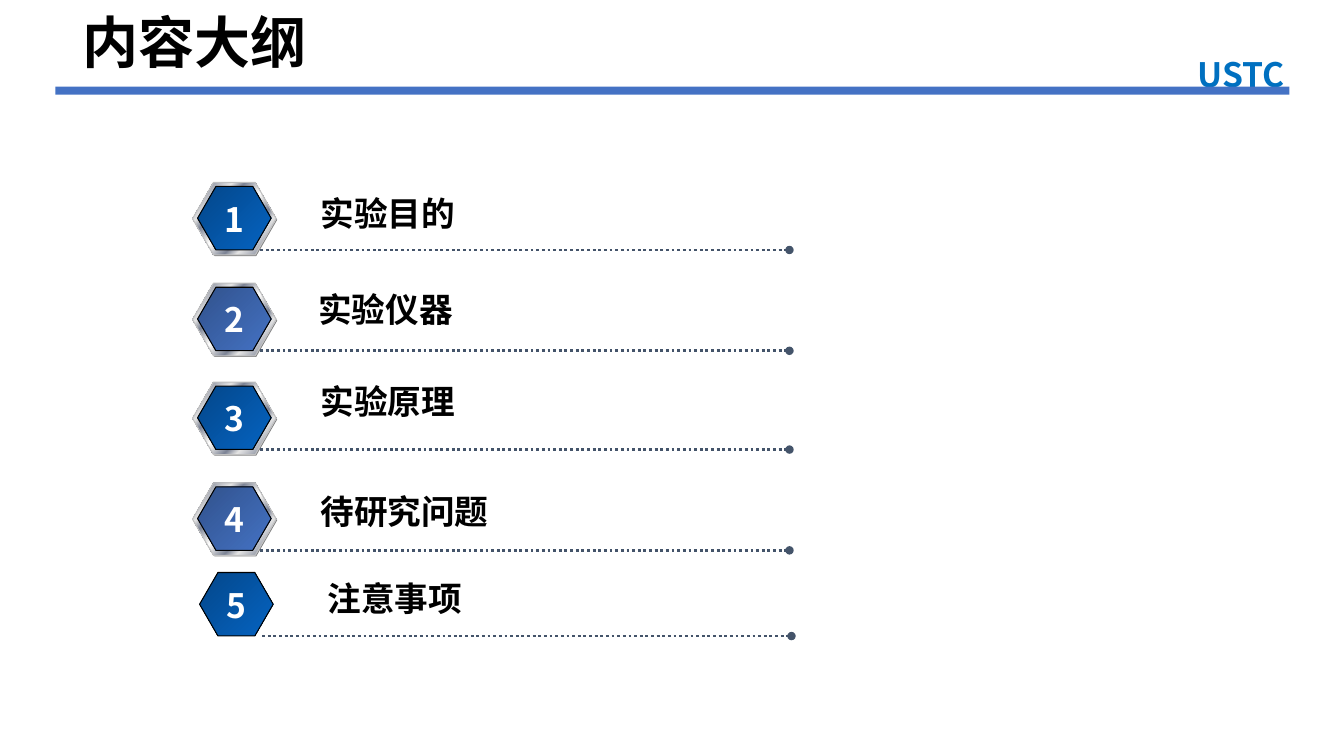
from lxml.etree import SubElement
from pptx import Presentation
from pptx.dml.color import RGBColor
from pptx.enum.dml import MSO_LINE
from pptx.enum.shapes import MSO_CONNECTOR, MSO_SHAPE
from pptx.enum.text import MSO_AUTO_SIZE, PP_ALIGN
from pptx.oxml.ns import qn
from pptx.util import Inches, Pt

FONT = "Noto Sans CJK SC"
TITLE, SCHOOL = "内容大纲", "USTC"
BLUE = [(0, "04478A"), (100, "0563C1")]
NAVY = [(0, "31528C"), (100, "4472C4")]
STEEL = [(0, "E6E6E6"), (8, "7D8496"), (26, "E6E6E6"), (34, "7D8496"),
         (46, "E6E6E6"), (50, "FFFFFF"), (54, "E6E6E6"), (66, "7D8496"),
         (74, "E6E6E6"), (92, "7D8496"), (100, "E6E6E6")]
# label, hexagon left and top, label left, top and width, framed
ROWS = [
    ("实验目的", 1.96, 1.85, 3.08, 1.86, 1.73, True),
    ("实验仪器", 1.96, 2.85, 3.06, 2.82, 1.56, True),
    ("实验原理", 1.96, 3.83, 3.08, 3.73, 1.56, True),
    ("待研究问题", 1.96, 4.83, 3.08, 4.82, 1.89, True),
    ("注意事项", 1.98, 5.68, 3.15, 5.68, 1.56, False),
]

deck = Presentation()
deck.slide_width, deck.slide_height = Inches(13.33), Inches(7.5)
slide = deck.slides.add_slide(deck.slide_layouts[6])


def color(code):
    return RGBColor.from_string(code)


def add_text(text, x, y, w, h, size=24, code="000000", center=False, wrap=False):
    box = slide.shapes.add_textbox(Inches(x), Inches(y), Inches(w), Inches(h))
    frame = box.text_frame
    frame.word_wrap = wrap
    frame.auto_size = MSO_AUTO_SIZE.SHAPE_TO_FIT_TEXT
    para = frame.paragraphs[0]
    run = para.add_run()
    run.text = text
    if center:
        para.alignment = PP_ALIGN.CENTER
    font = para.font
    font.name, font.size, font.bold = FONT, Pt(size), True
    font.color.rgb = color(code)
    SubElement(font._element, qn("a:ea")).set("typeface", FONT)
    return run


def add_shape(kind, x, y, w, h, fill, line=None):
    shape = slide.shapes.add_shape(kind, Inches(x), Inches(y), Inches(w), Inches(h))
    shape.shadow.inherit = False
    if isinstance(fill, str):
        shape.fill.solid()
        shape.fill.fore_color.rgb = color(fill)
    else:
        shape.fill.gradient()
        shape.fill.gradient_angle = 315
        stops = shape._element.spPr.find(qn("a:gradFill")).find(qn("a:gsLst"))
        for old in list(stops):
            stops.remove(old)
        for place, code in fill:
            stop = SubElement(stops, qn("a:gs"), pos=str(place * 1000))
            SubElement(stop, qn("a:srgbClr"), val=code)
    if line:
        shape.line.color.rgb = color(line)
        shape.line.width = Pt(0.75)
    else:
        shape.line.fill.background()
    return shape


def add_hex(x, y, w, h, fill, line=None):
    shape = add_shape(MSO_SHAPE.HEXAGON, x, y, w, h, fill, line)
    shape.adjustments[0] = 0.289


def add_rule(x, y, width):
    rule = slide.shapes.add_connector(
        MSO_CONNECTOR.STRAIGHT, Inches(x), Inches(y), Inches(x + width), Inches(y))
    rule.line.color.rgb = color("44546A")
    rule.line.width = Pt(2)
    rule.line.dash_style = MSO_LINE.ROUND_DOT
    props = rule._element.spPr
    SubElement(props.find(qn("a:ln")), qn("a:tailEnd"), type="oval")
    SubElement(props, qn("a:effectLst"))


school = add_text(SCHOOL, 11.29, 0.49, 2.04, 0.5, code="0070C0", center=True, wrap=True)
edge = SubElement(school.font._element, qn("a:ln"), w=str(Pt(0.75)))
SubElement(SubElement(edge, qn("a:solidFill")), qn("a:srgbClr"), val="FFFFFF")
add_shape(MSO_SHAPE.RECTANGLE, 0.55, 0.86, 12.24, 0.08, "4472C4")
add_text(TITLE, 0.72, 0.03, 2.6, 0.77, size=40, wrap=True)

for index, (label, x, y, left, top, width, framed) in enumerate(ROWS):
    if framed:
        add_hex(x - 0.04, y - 0.03, 0.83, 0.72, "808080")
        add_hex(x - 0.05, y - 0.04, 0.83, 0.72, STEEL, "C0C0C0")
    add_hex(x, y, 0.73, 0.63, NAVY if index % 2 else BLUE, "000000")
    add_rule(x + 0.62, y + 0.63, 5.25)
    add_text(label, left, top, width, 0.51)
    add_text(str(index + 1), x + 0.17, y + 0.07, 0.37, 0.51, code="FFFFFF", center=True)

deck.save("out.pptx")
